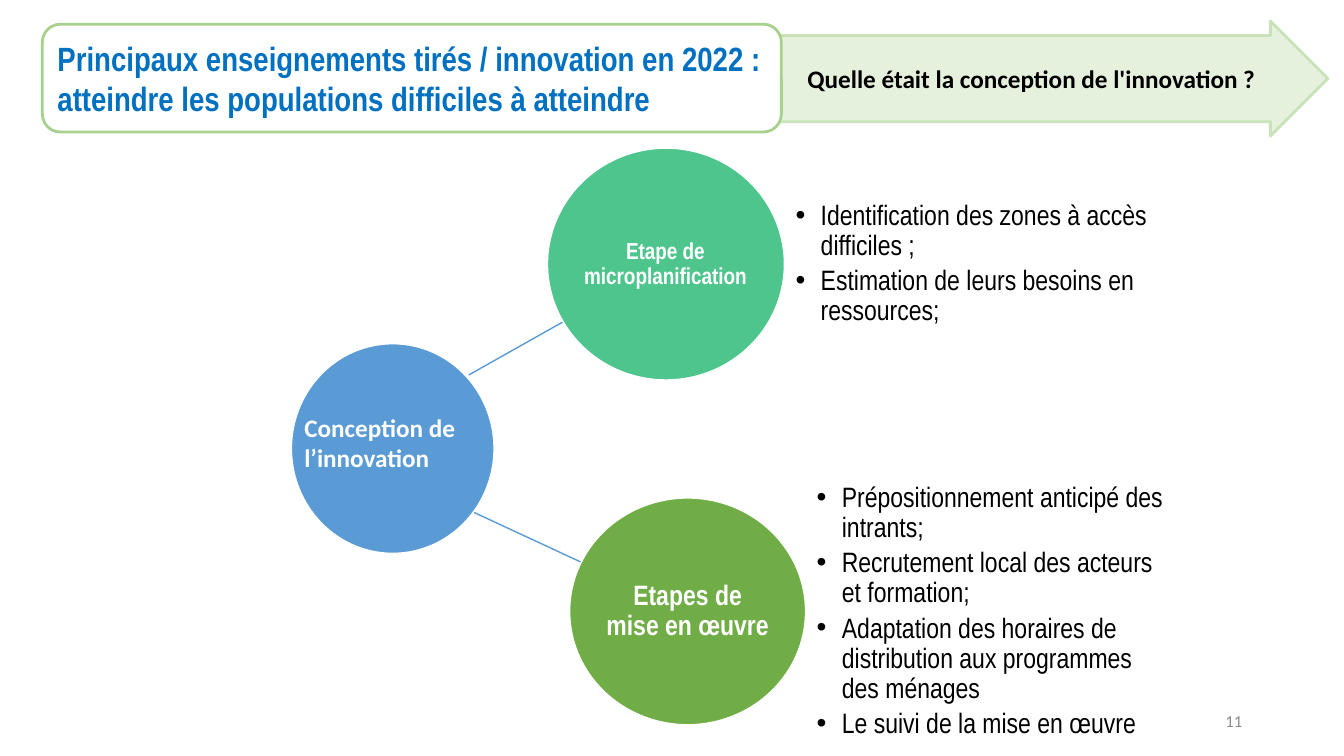
from dataclasses import dataclass

from lxml.etree import SubElement
from pptx import Presentation
from pptx.dml.color import RGBColor
from pptx.enum.shapes import MSO_CONNECTOR as Link, MSO_SHAPE as Shape
from pptx.enum.text import MSO_ANCHOR as Anchor, MSO_AUTO_SIZE as Fit, PP_ALIGN as Align
from pptx.oxml.ns import qn
from pptx.util import Emu, Pt

SCALE = 9144  # EMU in one px, 100 px to the inch


@dataclass(frozen=True)
class Theme:
    white: str = "FFFFFF"
    black: str = "000000"
    title: str = "0070C0"
    frame: str = "A9D18E"
    arrow: str = "E2F0D9"
    edge: str = "C5E0B4"
    blue: str = "5B9BD5"
    mint: str = "4DC58D"
    green: str = "70AD47"
    grey: str = "8C8C8C"
    narrow: str = "Arial Narrow"
    plain: str = "Calibri"
    head: float = 24
    body: float = 20
    label: float = 18
    small: float = 16.5
    note: float = 12


def px(*nums):
    return [Emu(n * SCALE) for n in nums]


def write(frame, *lines, font, size, color, bold=False, align=Align.LEFT,
          anchor=Anchor.TOP, inset=(10, 5), space=1.0, after=0, bullet=False):
    frame.word_wrap = True
    frame.auto_size = Fit.NONE
    frame.vertical_anchor = anchor
    side, top = px(*inset)
    frame.margin_left = frame.margin_right = side
    frame.margin_top = frame.margin_bottom = top
    for i, line in enumerate(lines):
        para = frame.add_paragraph() if i else frame.paragraphs[0]
        para.alignment = align
        para.line_spacing = space
        para.space_before = Pt(0)
        para.space_after = Pt(after)
        if bullet:
            props = para._p.get_or_add_pPr()
            indent = 25 * SCALE
            props.set("marL", str(indent))
            props.set("indent", str(-indent))
            SubElement(props, qn("a:buFont")).set("typeface", "Arial")
            SubElement(props, qn("a:buChar")).set("char", "•")
        run = para.add_run()
        run.text = line
        run.font.name = font
        run.font.size = Pt(size)
        run.font.bold = bold
        run.font.color.rgb = RGBColor.from_string(color)


class Board:
    def __init__(self, slide, theme):
        self.slide = slide
        self.shapes = slide.shapes
        self.theme = theme

    def shape(self, kind, box, fill, line, width=1, adjust=(), alpha=None):
        item = self.shapes.add_shape(kind, *px(*box))
        item.shadow.inherit = False
        for i, value in enumerate(adjust):
            item.adjustments[i] = value
        item.fill.solid()
        item.fill.fore_color.rgb = RGBColor.from_string(fill)
        item.line.color.rgb = RGBColor.from_string(line)
        item.line.width = Pt(width)
        if alpha:
            for color in item._element.spPr.iter(qn("a:srgbClr")):
                SubElement(color, qn("a:alpha")).set("val", str(alpha * 1000))

    def title(self, text, box):
        """Fill the title placeholder and bring it to the front."""
        item = self.shapes.title
        item.left, item.top, item.width, item.height = px(*box)
        write(item.text_frame, text, font=self.theme.narrow, size=self.theme.head,
              color=self.theme.title, bold=True, anchor=Anchor.MIDDLE)
        self.shapes.element.append(item.element)

    def text(self, box, *lines, **style):
        item = self.shapes.add_textbox(*px(*box))
        write(item.text_frame, *lines, **style)

    def link(self, ends):
        item = self.shapes.add_connector(Link.STRAIGHT, *px(*ends))
        item.line.color.rgb = RGBColor.from_string(self.theme.blue)
        item.line.width = Pt(1)
        SubElement(item._element.spPr, qn("a:effectLst"))

    def step(self, box, fill, name, size, points):
        """Draw a circle with its name inside and its points to the right."""
        left, top, width, height = box
        theme = self.theme
        self.shape(Shape.OVAL, box, fill, theme.white)
        self.text((left + 34, top + 33, 166, height - 66), name, font=theme.narrow,
                  size=size, color=theme.white, bold=True, align=Align.CENTER,
                  anchor=Anchor.MIDDLE, inset=(1, 1), space=0.9)
        self.text((left + width + 11, top, 352, height), *points, font=theme.narrow,
                  size=theme.body, color=theme.black, anchor=Anchor.MIDDLE,
                  inset=(0, 0), space=0.9, after=3.5, bullet=True)


def main():
    deck = Presentation()
    deck.slide_width, deck.slide_height = px(1333, 750)
    theme = Theme()
    board = Board(deck.slides.add_slide(deck.slide_layouts[5]), theme)

    board.shape(Shape.RIGHT_ARROW, (652, 21, 665, 114), theme.arrow, theme.edge,
                width=2, adjust=(0.75, 0.5), alpha=89)
    board.shape(Shape.ROUNDED_RECTANGLE, (42, 24, 733, 107), theme.white,
                theme.frame, width=2)
    board.title("Principaux enseignements tirés / innovation en 2022 : "
                "atteindre les populations difficiles à atteindre",
                (47, 24, 723, 107))
    label = dict(font=theme.plain, size=theme.label, bold=True)
    board.text((791, 58, 500, 40), "Quelle était la conception de l'innovation ?",
               color=theme.black, **label)

    for ends in ((465, 506, 577, 558), (465, 372, 559, 319)):
        board.link(ends)
    board.shape(Shape.OVAL, (289, 341, 201, 208), theme.blue, theme.white)
    board.step((543, 147, 235, 230), theme.mint, "Etape de microplanification",
               theme.small, ("Identification des zones à accès difficiles ;",
                             "Estimation de leurs besoins en ressources;"))
    board.step((565, 494, 234, 225), theme.green, "Etapes de mise en œuvre",
               theme.body, ("Prépositionnement anticipé des intrants;",
                            "Recrutement local des acteurs et formation;",
                            "Adaptation des horaires de distribution aux "
                            "programmes des ménages",
                            "Le suivi de la mise en œuvre"))
    board.text((292, 404, 203, 71), "Conception de l’innovation",
               color=theme.white, **label)
    board.text((942, 695, 300, 40), "11", font=theme.plain, size=theme.note,
               color=theme.grey, align=Align.RIGHT, anchor=Anchor.MIDDLE)
    deck.save("out.pptx")


if __name__ == "__main__":
    main()
